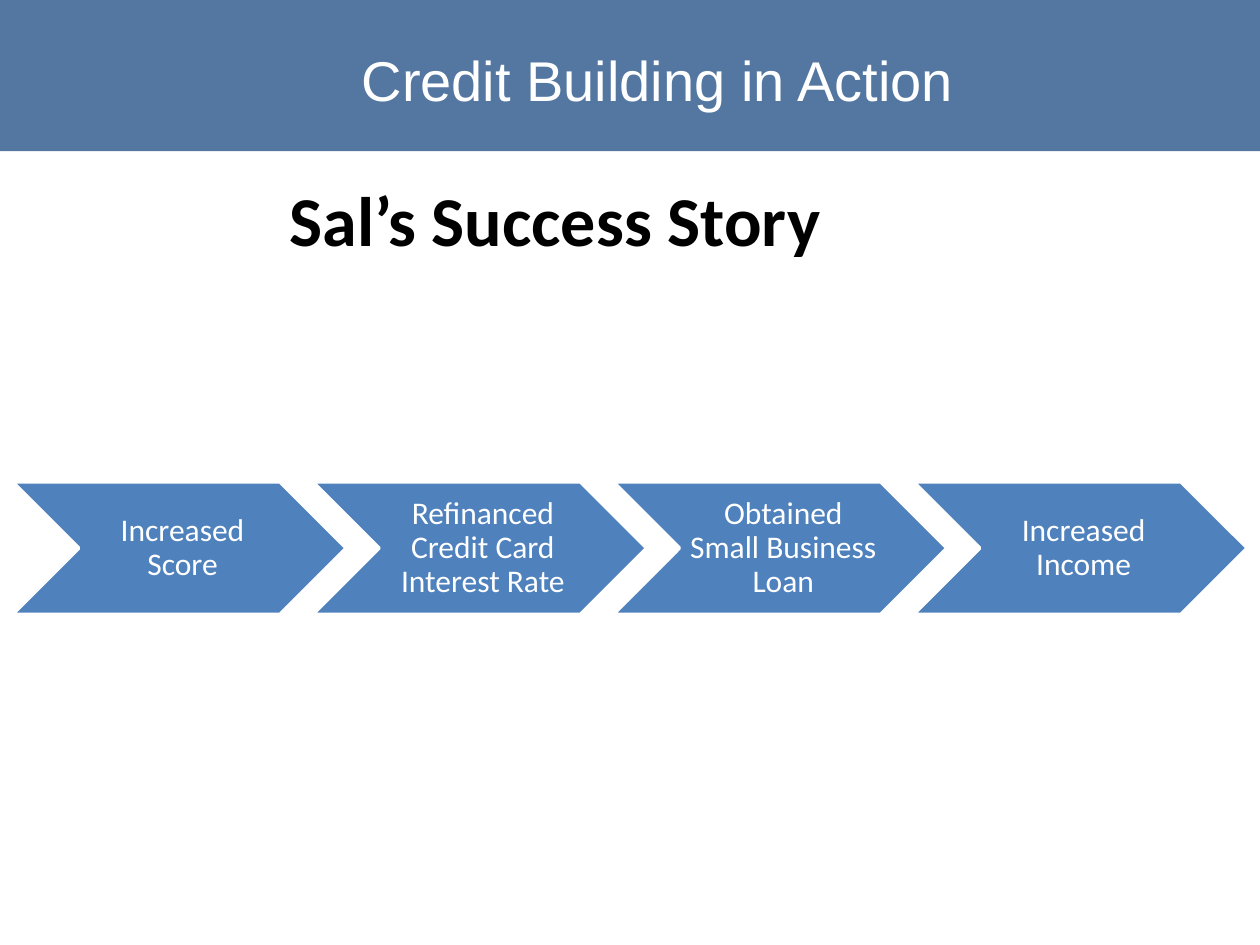
from pptx import Presentation
from pptx import util as u
from pptx.dml.color import RGBColor
from pptx.enum import shapes, text
from pptx.oxml.ns import qn
from lxml import etree

WIDE, HIGH = 10, 7.5
STEPS = [
    "Increased Score",
    "Refinanced Credit Card Interest Rate",
    "Obtained Small Business Loan",
    "Increased Income",
]


def hue(code):
    return RGBColor.from_string(code)


def inch(*sizes):
    return [u.Inches(size) for size in sizes]


def style(frame, words, face, size, color, bold=False, align=None):
    frame.text = words
    frame.word_wrap = True
    par = frame.paragraphs[0]
    par.alignment = align
    font = par.runs[0].font
    font.name, font.size, font.bold = face, u.Pt(size), bold
    font.color.rgb = hue(color)


def inset(frame, left, top, right, bottom):
    frame.margin_left, frame.margin_top = inch(left, top)
    frame.margin_right, frame.margin_bottom = inch(right, bottom)
    frame.vertical_anchor = text.MSO_ANCHOR.MIDDLE


def header(slide, x, y, w, h):
    band = slide.shapes.add_shape(
        shapes.MSO_SHAPE.RECTANGLE, *inch(x, y, w, h))
    band.shadow.inherit = False
    band.fill.solid()
    band.fill.fore_color.rgb = hue("376092")
    shade = band.fill._xPr.find(qn("a:solidFill"))[0]
    etree.SubElement(shade, qn("a:alpha"), val="85000")
    band.line.fill.background()
    slide.shapes._spTree.insert(2, band._element)

    title = slide.shapes.title
    title.left, title.top, title.width, title.height = inch(
        x + w * 0.102, y + h * 0.25, w * 0.84, h * 0.55)
    style(title.text_frame, "Credit Building in Action", "Arial", 32,
          "FFFFFF", align=text.PP_ALIGN.CENTER)
    inset(title.text_frame, 0.12, 0.06, 0.12, 0.06)
    title.text_frame.auto_size = text.MSO_AUTO_SIZE.NONE


def story(slide, x, y, w, h):
    box = slide.shapes.add_textbox(*inch(x, y, w, h))
    style(box.text_frame, "Sal’s Success Story", "Calibri", 40,
          "000000", bold=True)


def chain(slide, x, y, w, h):
    step = w / (len(STEPS) - 1 + 1 / 0.9)
    for col, words in enumerate(STEPS):
        link = slide.shapes.add_shape(
            shapes.MSO_SHAPE.CHEVRON,
            *inch(x + col * step, y, step / 0.9, h))
        link.shadow.inherit = False
        link.fill.solid()
        link.fill.fore_color.rgb = hue("4F81BD")
        link.line.color.rgb = hue("FFFFFF")
        link.line.width = u.Pt(2)
        style(link.text_frame, words, "Calibri", 18, "FFFFFF",
              align=text.PP_ALIGN.CENTER)
        link.text_frame.paragraphs[0].line_spacing = 0.9
        inset(link.text_frame, 0.08, 0.03, 0.03, 0.03)


def main():
    deck = Presentation()
    deck.slide_width, deck.slide_height = inch(WIDE, HIGH)
    slide = deck.slides.add_slide(deck.slide_layouts[5])
    header(slide, 0, 0, WIDE, HIGH * 0.16)
    story(slide, WIDE * 0.22, HIGH * 0.18, WIDE * 0.57, HIGH * 0.1)
    chain(slide, WIDE * 0.01, HIGH * 0.51, WIDE * 0.98, HIGH * 0.14)
    deck.save("out.pptx")


if __name__ == "__main__":
    main()
